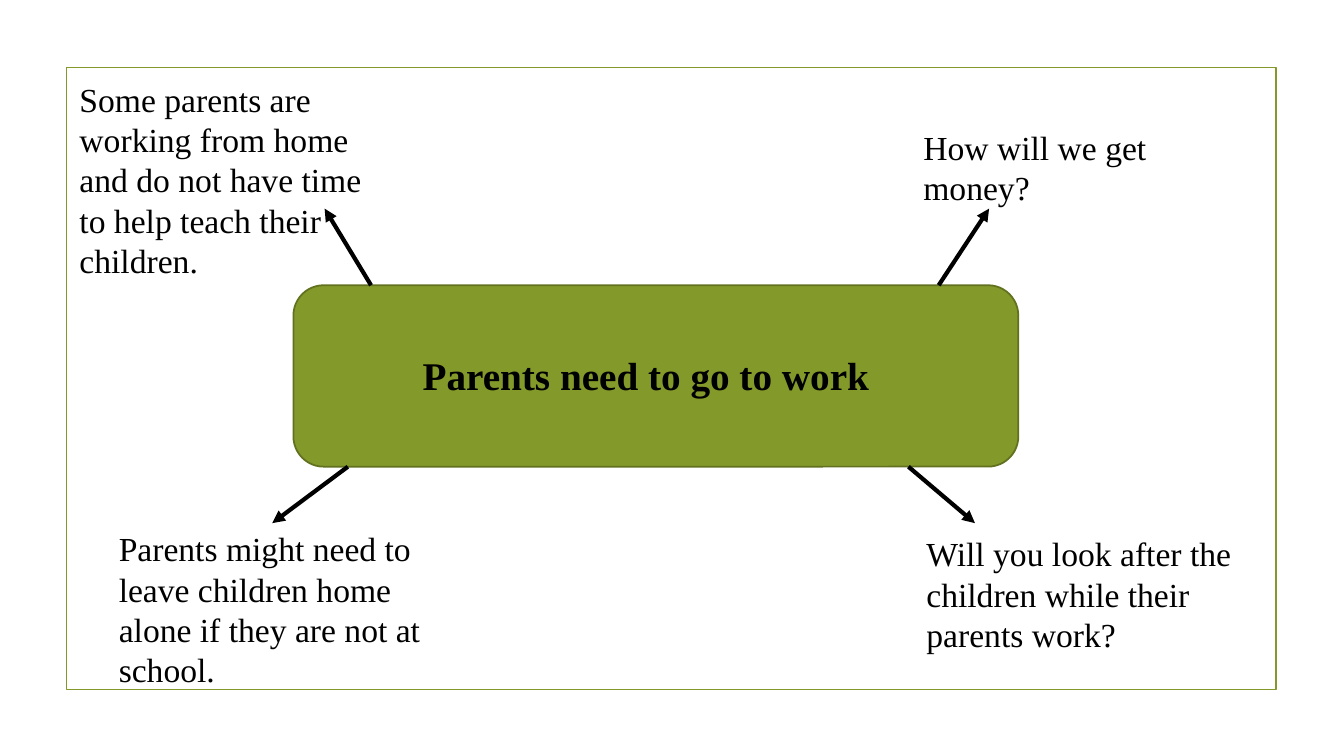
from pptx import Presentation
from pptx.dml.color import RGBColor
from pptx.enum.shapes import MSO_CONNECTOR, MSO_SHAPE
from pptx.enum.text import MSO_AUTO_SIZE, PP_ALIGN
from pptx.oxml.ns import qn
from pptx.util import Emu, Pt
from lxml import etree

RECTANGLE = MSO_SHAPE.RECTANGLE
ROUNDED_RECTANGLE = MSO_SHAPE.ROUNDED_RECTANGLE
STRAIGHT = MSO_CONNECTOR.STRAIGHT
FIT_SHAPE = MSO_AUTO_SIZE.SHAPE_TO_FIT_TEXT
LEFT = PP_ALIGN.LEFT
CENTER = PP_ALIGN.CENTER

EMU_PER_PX = 9144
FONT = "Times New Roman"
BLACK = "000000"
OLIVE = "83992A"
DARK_OLIVE = "61711F"

CENTRE_TOP = 283
CENTRE_HEIGHT = 180
CENTRE_BOTTOM = CENTRE_TOP + CENTRE_HEIGHT
UPPER_TIP = 207
LOWER_TIP = 519
CONCERN_WIDTH = 324

CONCERNS = [
    (69, 73, 212, "Some parents are working from home and do not have time to help teach their children."),
    (906, 121, 91, "How will we get money?"),
    (108, 519, 172, "Parents might need to leave children home alone if they are not at school."),
    (909, 524, 131, "Will you look after the children while their parents work?"),
]
ARROWS = [
    (368, CENTRE_TOP, 322, UPPER_TIP),
    (931, CENTRE_TOP, 981, UPPER_TIP),
    (345, CENTRE_BOTTOM, 270, LOWER_TIP),
    (901, CENTRE_BOTTOM, 967, LOWER_TIP),
]


def px(*lengths):
    """Turn pixel lengths into EMU."""
    return [Emu(length * EMU_PER_PX) for length in lengths]


def color(hex_string):
    """Turn a hex string into a colour."""
    return RGBColor.from_string(hex_string)


def add_box(slide, kind, bounds, line_color, fill_color=None):
    """Draw an outlined shape, filled when a fill colour is given."""
    shape = slide.shapes.add_shape(kind, *px(*bounds))
    shape.shadow.inherit = False
    shape.line.color.rgb = color(line_color)
    shape.line.width = Pt(1.25)
    if fill_color:
        shape.fill.solid()
        shape.fill.fore_color.rgb = color(fill_color)
    else:
        shape.fill.background()


def add_text(slide, bounds, text, size, bold=False, alignment=LEFT):
    """Place a wrapped paragraph of black text."""
    text_frame = slide.shapes.add_textbox(*px(*bounds)).text_frame
    text_frame.word_wrap = True
    text_frame.auto_size = FIT_SHAPE
    text_frame.text = text
    paragraph = text_frame.paragraphs[0]
    paragraph.alignment = alignment
    font = paragraph.runs[0].font
    font.name = FONT
    font.size = Pt(size)
    font.bold = bold
    font.color.rgb = color(BLACK)


def add_arrow(slide, ends):
    """Draw a straight black arrow between two points."""
    connector = slide.shapes.add_connector(STRAIGHT, *px(*ends))
    connector.line.color.rgb = color(BLACK)
    connector.line.width = Pt(3)
    line = connector.line._get_or_add_ln()
    etree.SubElement(line, qn("a:tailEnd"), type="triangle")
    etree.SubElement(connector._element.spPr, qn("a:effectLst"))


def main():
    """Build the slide about parents and work."""
    presentation = Presentation()
    presentation.slide_width, presentation.slide_height = px(1333, 750)
    slide = presentation.slides.add_slide(presentation.slide_layouts[6])
    add_box(slide, RECTANGLE, (66, 67, 1200, 617), OLIVE)
    add_box(slide, ROUNDED_RECTANGLE, (291, CENTRE_TOP, 719, CENTRE_HEIGHT), DARK_OLIVE, OLIVE)
    add_text(slide, (345, 344, 591, 57), "Parents need to go to work", 28, True, CENTER)
    for left, top, height, concern in CONCERNS:
        add_text(slide, (left, top, CONCERN_WIDTH, height), concern, 24)
    for ends in ARROWS:
        add_arrow(slide, ends)
    presentation.save("out.pptx")


if __name__ == "__main__":
    main()
